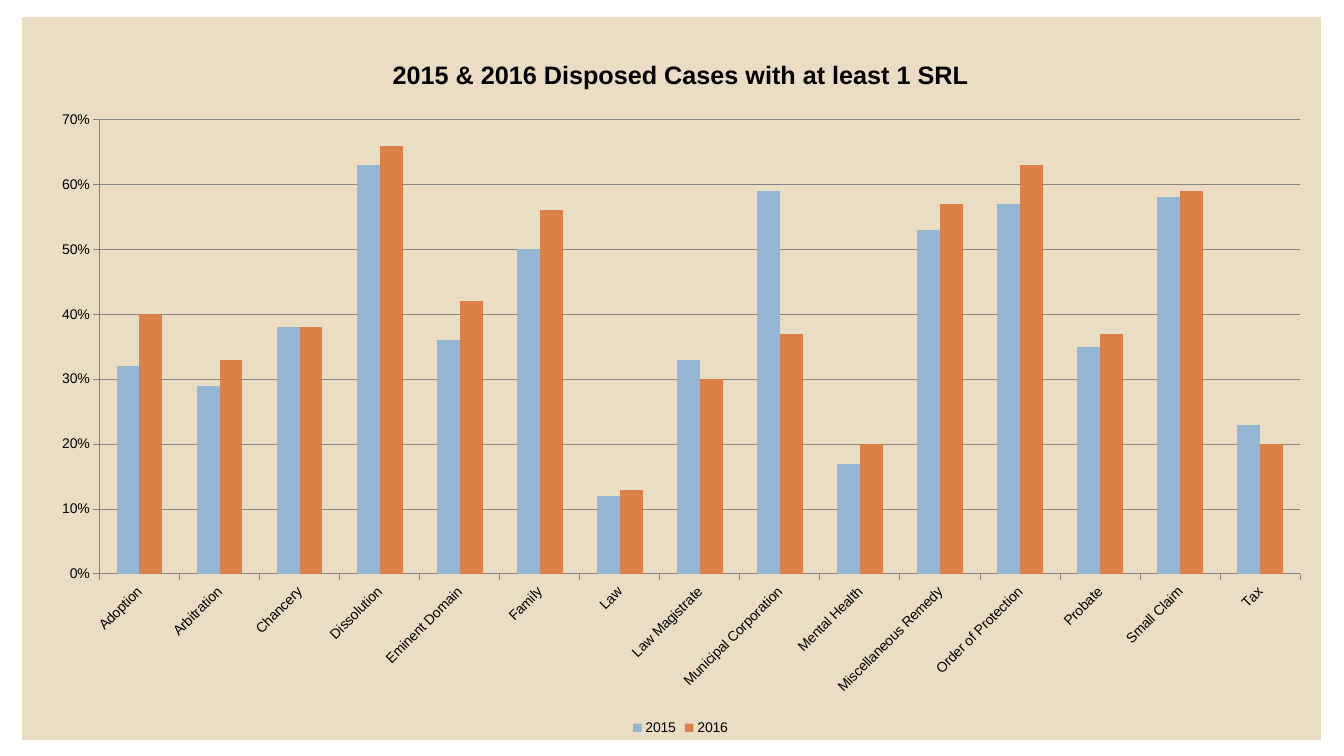
from dataclasses import dataclass

from lxml import etree
from pptx import Presentation
from pptx.chart.data import CategoryChartData
from pptx.dml.color import RGBColor
from pptx.enum.chart import XL_CHART_TYPE, XL_LEGEND_POSITION, XL_TICK_MARK
from pptx.enum.shapes import MSO_SHAPE
from pptx.oxml.ns import qn
from pptx.util import Inches, Pt

CLUSTERED = XL_CHART_TYPE.COLUMN_CLUSTERED
LEGEND_BOTTOM = XL_LEGEND_POSITION.BOTTOM
TICK_OUTSIDE = XL_TICK_MARK.OUTSIDE
RECTANGLE = MSO_SHAPE.RECTANGLE

PAGE_WIDTH, PAGE_HEIGHT = Inches(13.33), Inches(7.5)
FONT = "Arial"
COLOURS = {
    "panel": "EBDDC3",
    "text": "000000",
    "axis": "868686",
    "blue": "94B6D2",
    "orange": "DD8047",
}
TITLE = "2015 & 2016 Disposed Cases with at least 1 SRL"
CASE_TYPES = [
    "Adoption", "Arbitration", "Chancery", "Dissolution", "Eminent Domain",
    "Family", "Law", "Law Magistrate", "Municipal Corporation", "Mental Health",
    "Miscellaneous Remedy", "Order of Protection", "Probate", "Small Claim", "Tax",
]


@dataclass(frozen=True)
class Area:
    """A rectangle in shares of its container's width and height."""
    left: float
    top: float
    width: float
    height: float

    def on_page(self) -> tuple[int, int, int, int]:
        return (int(self.left * PAGE_WIDTH), int(self.top * PAGE_HEIGHT),
                int(self.width * PAGE_WIDTH), int(self.height * PAGE_HEIGHT))


@dataclass(frozen=True)
class Year:
    name: str
    colour: str
    shares: tuple[float, ...]


PANEL = Area(0.22 / 13.33, 0.17 / 7.5, 12.88 / 13.33, 7.17 / 7.5)
CHART = Area(0.36 / 13.33, 0.34 / 7.5, 12.78 / 13.33, 7 / 7.5)
PLOT = Area(0.049, 0.121, 0.932, 0.644)
YEARS = [
    Year("2015", "blue", (0.32, 0.29, 0.38, 0.63, 0.36, 0.5, 0.12, 0.33,
                          0.59, 0.17, 0.53, 0.57, 0.35, 0.58, 0.23)),
    Year("2016", "orange", (0.4, 0.33, 0.38, 0.66, 0.42, 0.56, 0.13, 0.3,
                            0.37, 0.2, 0.57, 0.63, 0.37, 0.59, 0.2)),
]


def colour(name: str) -> RGBColor:
    return RGBColor.from_string(COLOURS[name])


def style_font(font, size: float, bold: bool = False) -> None:
    font.name = FONT
    font.size = Pt(size)
    font.bold = bold
    font.color.rgb = colour("text")


def style_line(line) -> None:
    line.color.rgb = colour("axis")
    line.width = Pt(0.75)


def add_panel(page) -> None:
    panel = page.shapes.add_shape(RECTANGLE, *PANEL.on_page())
    panel.shadow.inherit = False
    panel.fill.solid()
    panel.fill.fore_color.rgb = colour("panel")
    panel.line.fill.background()


def place_plot(chart, area: Area) -> None:
    """Fix the inner plot area, leaving room for the slanted labels."""
    plot_area = chart.plots[0]._element.getparent()
    layout = plot_area.find(qn("c:layout"))
    if layout is None:
        layout = etree.Element(qn("c:layout"))
        plot_area.insert(0, layout)
    manual = etree.SubElement(layout, qn("c:manualLayout"))
    settings = [("layoutTarget", "inner"), ("xMode", "edge"), ("yMode", "edge"),
                ("x", area.left), ("y", area.top), ("w", area.width), ("h", area.height)]
    for tag, value in settings:
        etree.SubElement(manual, qn(f"c:{tag}")).set("val", str(value))


def style_axes(chart) -> None:
    for axis in (chart.category_axis, chart.value_axis):
        axis.major_tick_mark = TICK_OUTSIDE
        style_line(axis.format.line)
        style_font(axis.tick_labels.font, 10)
    slanted = chart.category_axis.tick_labels.font._element.getparent().getparent().getparent()
    slanted.find(qn("a:bodyPr")).set("rot", str(-45 * 60000))
    values = chart.value_axis
    values.minimum_scale, values.maximum_scale, values.major_unit = 0, 0.7, 0.1
    values.has_major_gridlines = True
    style_line(values.major_gridlines.format.line)
    values.tick_labels.number_format = "0%"
    values.tick_labels.number_format_is_linked = False


def add_case_chart(page) -> None:
    data = CategoryChartData(number_format="0%")
    data.categories = CASE_TYPES
    for year in YEARS:
        data.add_series(year.name, year.shares)
    chart = page.shapes.add_chart(CLUSTERED, *CHART.on_page(), data).chart
    style_font(chart.font, 10)

    chart.has_title = True
    span = chart.chart_title.text_frame.paragraphs[0].add_run()
    span.text = TITLE
    style_font(span.font, 18, bold=True)
    chart.chart_title.include_in_layout = False

    chart.has_legend = True
    chart.legend.position = LEGEND_BOTTOM
    chart.legend.include_in_layout = False
    style_font(chart.legend.font, 10)

    plot = chart.plots[0]
    plot.vary_by_categories = False
    plot.gap_width, plot.overlap = 150, 0
    for year, series in zip(YEARS, plot.series):
        series.format.fill.solid()
        series.format.fill.fore_color.rgb = colour(year.colour)
    style_axes(chart)
    place_plot(chart, PLOT)


def main() -> None:
    deck = Presentation()
    deck.slide_width, deck.slide_height = PAGE_WIDTH, PAGE_HEIGHT
    page = deck.slides.add_slide(deck.slide_layouts[6])
    add_panel(page)
    add_case_chart(page)
    deck.save("out.pptx")


if __name__ == "__main__":
    main()
